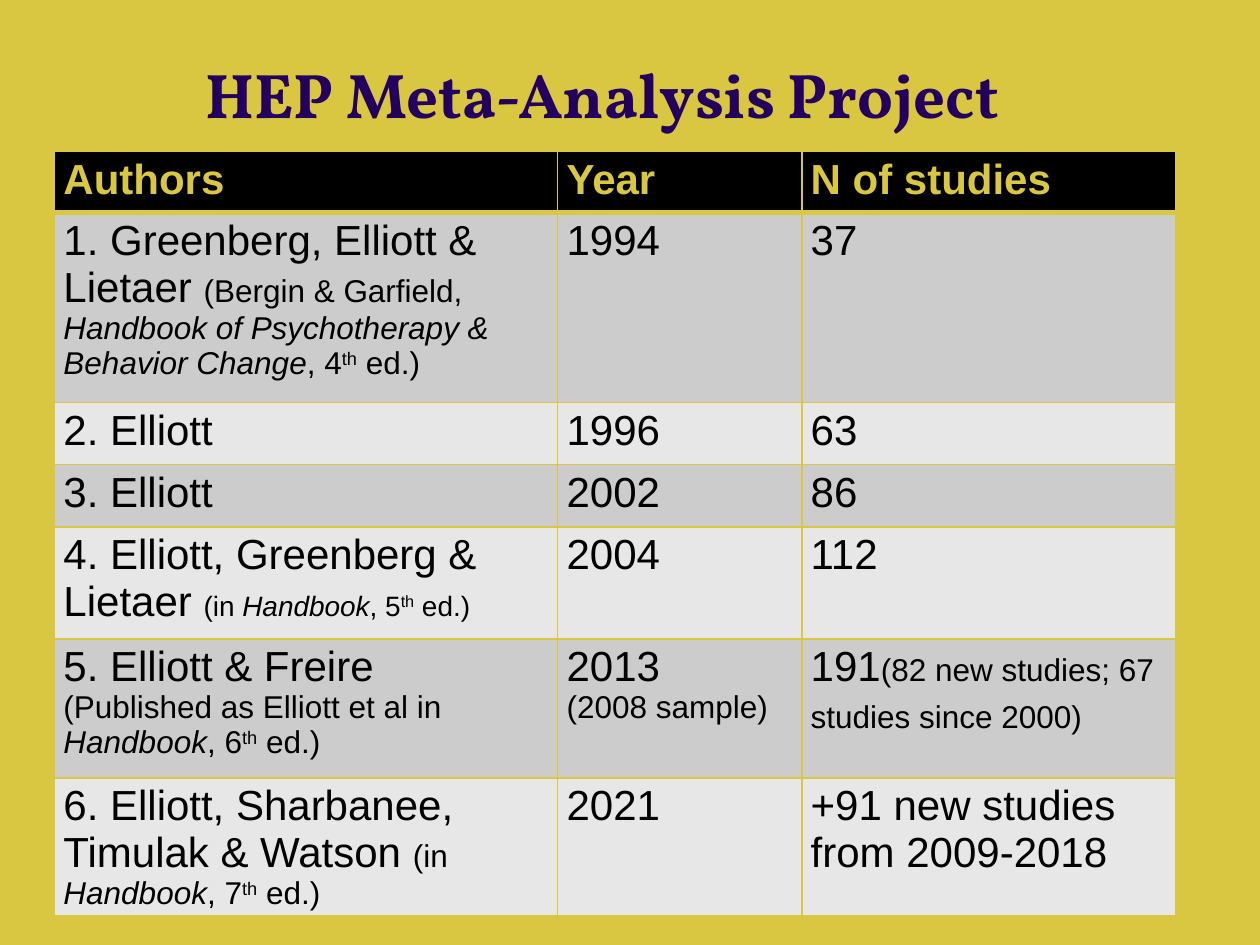
from pptx import Presentation
from pptx.dml.color import RGBColor
from pptx.enum.text import MSO_ANCHOR as Anchor, PP_ALIGN as Align
from pptx.oxml import parse_xml
from pptx.oxml.ns import nsdecls
from pptx.util import Pt

GOLD, PURPLE, BLACK = "D9C641", "23005F", "000000"
BANDS = ["CCCCCC", "E7E7E7"]


def color(hex_text):
    return RGBColor.from_string(hex_text)


def add_span(para, text, size, ink, font="Arial", bold=False, style=""):
    span = para.add_run()
    span.text = text
    span.font.name = font
    span.font.size = Pt(size)
    span.font.bold = bold
    span.font.italic = style == "italic"
    span.font.color.rgb = color(ink)
    if style == "super":
        span.font._element.set("baseline", "30000")


deck = Presentation()
deck.slide_width, deck.slide_height = Pt(720), Pt(540)
page = deck.slides.add_slide(deck.slide_layouts[5])
page.background.fill.solid()
page.background.fill.fore_color.rgb = color(GOLD)

# Title
title = page.shapes.title
title.left, title.top, title.width, title.height = Pt(48), Pt(21.5), Pt(592), Pt(63.5)
title.text_frame.vertical_anchor = Anchor.MIDDLE
para = title.text_frame.paragraphs[0]
para.alignment = Align.CENTER
add_span(para, "HEP Meta-Analysis Project", 36, PURPLE, "Vollkorn", True)

# Table content: a cell is a list of paragraphs, a paragraph a list of
# spans, a span its text, size and style
header = [[[(name, 24, "")]] for name in ("Authors", "Year", "N of studies")]
studies = [
    ([[("1. Greenberg, Elliott & Lietaer ", 24, ""), ("(Bergin & Garfield, ", 18, ""),
       ("Handbook of Psychotherapy & Behavior Change", 18, "italic"),
       (", 4", 18, ""), ("th", 18, "super"), (" ed.)", 18, "")]],
     [[("1994", 24, "")]], [[("37", 24, "")]]),
    ([[("2. Elliott", 24, "")]], [[("1996", 24, "")]], [[("63", 24, "")]]),
    ([[("3. Elliott", 24, "")]], [[("2002", 24, "")]], [[("86", 24, "")]]),
    ([[("4. Elliott, Greenberg & Lietaer ", 24, ""), ("(in ", 16, ""),
       ("Handbook", 16, "italic"), (", 5", 16, ""), ("th", 16, "super"),
       (" ed.)", 16, "")]],
     [[("2004", 24, "")]], [[("112", 24, "")]]),
    ([[("5. Elliott & Freire", 24, "")],
      [("(Published as Elliott et al in ", 18, ""), ("Handbook", 18, "italic"),
       (", 6", 18, ""), ("th", 18, "super"), (" ed.)", 18, "")]],
     [[("2013", 24, "")], [("(2008 sample)", 18, "")]],
     [[("191", 24, ""), ("(82 new studies; 67 studies since 2000)", 18, ""),
       (" ", 24, "")]]),
    ([[("6. Elliott, Sharbanee, Timulak & Watson ", 24, ""), ("(in ", 18, ""),
       ("Handbook", 18, "italic"), (", 7", 18, ""), ("th", 18, "super"),
       (" ed.)", 18, "")]],
     [[("2021", 24, "")]], [[("+91 new studies from 2009-2018", 24, "")]]),
]
rows = [header, *studies]
column_widths = [287.5, 139.5, 213.5]
row_heights = [35, 108.5, 35.5, 35.5, 64, 79.5, 79]

# Table
table = page.shapes.add_table(
    len(rows), len(column_widths), Pt(31.2), Pt(86.6),
    Pt(sum(column_widths)), Pt(sum(row_heights))).table
table.horz_banding = False
for column, width in zip(table.columns, column_widths):
    column.width = Pt(width)
for row, height in zip(table.rows, row_heights):
    row.height = Pt(height)

for row_index, row in enumerate(rows):
    is_header = row_index == 0
    for column_index, paragraphs in enumerate(row):
        cell = table.cell(row_index, column_index)
        cell.margin_left = cell.margin_right = Pt(5.1)
        cell.margin_top = cell.margin_bottom = Pt(2.6)

        # Gold cell borders, thicker between header and body
        for side in "LRTB":
            heavy = (is_header and side == "B") or (row_index == 1 and side == "T")
            cell._tc.get_or_add_tcPr().append(parse_xml(
                f'<a:ln{side} {nsdecls("a")} w="{Pt(3 if heavy else 1)}"><a:solidFill>'
                f'<a:srgbClr val="{GOLD}"/></a:solidFill></a:ln{side}>'))
        cell.fill.solid()
        cell.fill.fore_color.rgb = color(
            BLACK if is_header else BANDS[(row_index - 1) % 2])

        # Cell text
        frame = cell.text_frame
        for index, spans in enumerate(paragraphs):
            para = frame.add_paragraph() if index else frame.paragraphs[0]
            for text, size, style in spans:
                add_span(para, text, size, GOLD if is_header else BLACK,
                         bold=is_header, style=style)

deck.save("out.pptx")
